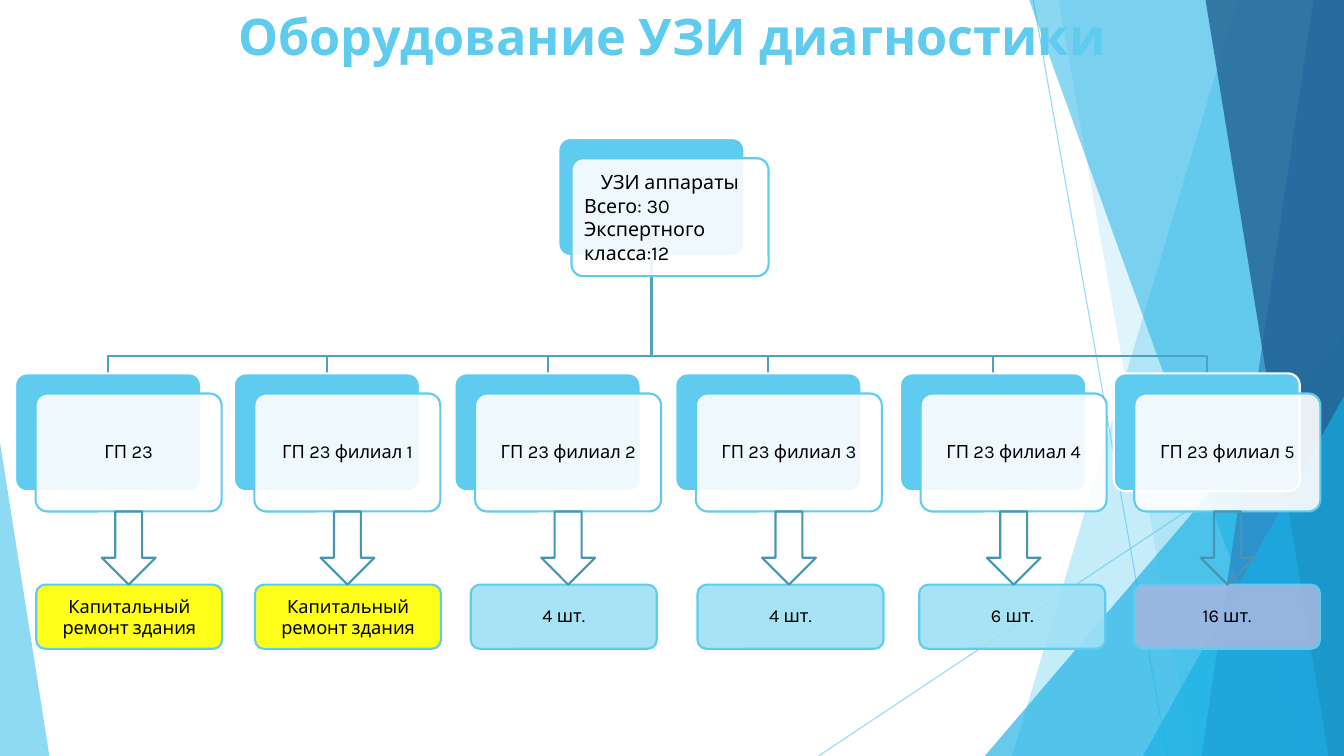
from lxml.etree import SubElement
from pptx import Presentation
from pptx.dml.color import RGBColor
from pptx.enum.shapes import MSO_CONNECTOR, MSO_SHAPE
from pptx.enum.text import MSO_ANCHOR, PP_ALIGN
from pptx.oxml.ns import qn
from pptx.util import Emu, Inches, Pt

COLUMNS, ROWS = 160, 90
WHITE = RGBColor(0xFF, 0xFF, 0xFF)
BLACK = RGBColor(0x00, 0x00, 0x00)
SKY = RGBColor(0x5F, 0xCB, 0xEF)
CYAN = RGBColor(0x17, 0xB0, 0xE4)
BLUE = RGBColor(0x2E, 0x83, 0xC3)
NAVY = RGBColor(0x22, 0x62, 0x92)
BRANCH = RGBColor(0x4C, 0xA3, 0xBF)
ARROW = RGBColor(0x46, 0x96, 0xB1)
YELLOW = RGBColor(0xFF, 0xFF, 0x00)
PALE = RGBColor(0x9F, 0xE0, 0xF5)
LILAC = RGBColor(0xA1, 0xB7, 0xE1)

CARD_WIDTH, CARD_HEIGHT = 22.15, 14.04
CARD_SHIFT = 2.44
CARD_TOP, BUS_ROW = 44.45, 42.4
ROOT_LEFT, ROOT_TOP = 66.48, 16.44
RESULT_TOP, RESULT_HEIGHT = 69.6, 7.64
REPAIR = "Капитальный ремонт здания"
CLINICS = [
    (1.8, "ГП 23", 4.32, REPAIR, YELLOW, 1.0),
    (27.84, "ГП 23 филиал 1", 30.36, REPAIR, YELLOW, 1.0),
    (54.12, "ГП 23 филиал 2", 56.04, "4 шт.", PALE, 0.9),
    (80.4, "ГП 23 филиал 3", 83.04, "4 шт.", PALE, 0.9),
    (107.16, "ГП 23 филиал 4", 109.44, "6 шт.", PALE, 0.9),
    (132.6, "ГП 23 филиал 5", 135, "16 шт.", LILAC, 0.9),
]


def write_text(paragraph, text, size=13, color=BLACK, bold=False,
               align=PP_ALIGN.CENTER, spacing=1.0):
    paragraph.alignment = align
    paragraph.line_spacing = spacing
    run = paragraph.add_run()
    run.text = text
    run.font.name = "Karla"
    run.font.size = Pt(size)
    run.font.bold = bold
    run.font.color.rgb = color


def set_opacity(shape, percent):
    color = next(shape.element.spPr.iter(qn("a:srgbClr")))
    SubElement(color, qn("a:alpha")).set("val", str(percent * 1000))


class SlideBuilder:
    def __init__(self, presentation):
        self.column = presentation.slide_width / COLUMNS
        self.row = presentation.slide_height / ROWS
        self.slide = presentation.slides.add_slide(presentation.slide_layouts[5])
        self.shapes = self.slide.shapes

    def point(self, column, row):
        return Emu(round(column * self.column)), Emu(round(row * self.row))

    def style(self, shape, fill=None, opacity=100, line=None):
        shape.shadow.inherit = False
        if fill is None:
            shape.fill.background()
        else:
            shape.fill.solid()
            shape.fill.fore_color.rgb = fill
            if opacity < 100:
                set_opacity(shape, opacity)
        if line is None:
            shape.line.fill.background()
        else:
            shape.line.color.rgb = line
            shape.line.width = Pt(1.5)
        return shape

    def title(self, text):
        title = self.shapes.title
        title.element.getparent().append(title.element)
        title.left, title.top = self.point(0, 0)
        title.width, title.height = self.point(COLUMNS, 8.4)
        title.text_frame.vertical_anchor = MSO_ANCHOR.MIDDLE
        write_text(title.text_frame.paragraphs[0], text, size=36, color=SKY, bold=True)

    def preset(self, kind, left, top, width, height, adjust=None, **look):
        shape = self.shapes.add_shape(
            kind, *self.point(left, top), *self.point(width, height))
        if adjust is not None:
            shape.adjustments[0] = adjust
        return self.style(shape, **look)

    def outline(self, points, close=True, **look):
        corners = [self.point(*corner) for corner in points]
        builder = self.shapes.build_freeform(*corners[0])
        builder.add_line_segments(corners[1:], close=close)
        return self.style(builder.convert_to_shape(), **look)

    def thin_line(self, start, end):
        connector = self.shapes.add_connector(
            MSO_CONNECTOR.STRAIGHT, *self.point(*start), *self.point(*end))
        connector.line.color.rgb = SKY
        connector.line.width = Pt(0.75)
        set_opacity(connector, 70)
        SubElement(connector.element.spPr, qn("a:effectLst"))

    def box(self, left, top, width, height, lines, fill=WHITE, adjust=0.1):
        shape = self.preset(MSO_SHAPE.ROUNDED_RECTANGLE, left, top, width, height,
                            adjust, fill=fill, opacity=90, line=SKY)
        frame = shape.text_frame
        frame.word_wrap = True
        frame.vertical_anchor = MSO_ANCHOR.MIDDLE
        frame.margin_left = frame.margin_right = Inches(0.09)
        frame.margin_top = frame.margin_bottom = Inches(0.09)
        for index, (text, look) in enumerate(lines):
            paragraph = frame.add_paragraph() if index else frame.paragraphs[0]
            write_text(paragraph, text, **look)

    def card(self, left, top, lines, shift=CARD_SHIFT, width=CARD_WIDTH):
        self.preset(MSO_SHAPE.ROUNDED_RECTANGLE, left, top, CARD_WIDTH, CARD_HEIGHT,
                    0.1, fill=SKY, line=WHITE)
        self.box(left + shift, top + 2.4, width, CARD_HEIGHT, lines)

    def band(self, top_left, bottom_left, fill, opacity):
        self.outline([(top_left, 0), (COLUMNS, 0), (COLUMNS, ROWS), (bottom_left, ROWS)],
                     fill=fill, opacity=opacity)

    def wedge(self, left, top, width, apex, fill, opacity):
        self.preset(MSO_SHAPE.ISOSCELES_TRIANGLE, left, top, width, ROWS - top, apex,
                    fill=fill, opacity=opacity)

    def backdrop(self):
        self.thin_line((123, 0), (138.96, ROWS))
        self.thin_line((COLUMNS, 48.36), (97.44, ROWS))
        self.band(147.36, 120.48, SKY, 36)
        self.band(126, 141.96, SKY, 20)
        self.wedge(117.24, 39.96, 42.76, 1, CYAN, 66)
        self.band(122.52, 154.92, CYAN, 50)
        self.band(156.36, 143.04, BLUE, 70)
        self.band(143.52, 158.16, NAVY, 80)
        self.wedge(136.08, 47.16, 23.92, 1, CYAN, 66)
        self.wedge(0, 52.68, 5.88, 0, SKY, 70)


def main():
    presentation = Presentation()
    presentation.slide_width = Inches(13.333)
    presentation.slide_height = Inches(7.5)
    builder = SlideBuilder(presentation)
    builder.backdrop()
    builder.title("Оборудование УЗИ диагностики")

    root_center = ROOT_LEFT + CARD_WIDTH / 2
    for left, *_ in reversed(CLINICS):
        center = left + CARD_WIDTH / 2
        builder.outline([(root_center, ROOT_TOP + CARD_HEIGHT), (root_center, BUS_ROW),
                         (center, BUS_ROW), (center, CARD_TOP)],
                        close=False, line=BRANCH)

    left_line = {"size": 14, "align": PP_ALIGN.LEFT}
    builder.card(ROOT_LEFT, ROOT_TOP,
                 [("УЗИ аппараты", {"size": 14}), ("Всего: 30", left_line),
                  ("Экспертного класса:12", left_line)], shift=1.56, width=23.46)

    for left, clinic, result_left, result, fill, spacing in CLINICS:
        builder.card(left, CARD_TOP, [(clinic, {"spacing": 0.9})])
        builder.box(result_left, RESULT_TOP, CARD_WIDTH, RESULT_HEIGHT,
                    [(result, {"spacing": spacing})], fill=fill, adjust=0.14)
        builder.preset(MSO_SHAPE.DOWN_ARROW, left + 10.32, 60.9, 6.4, 8.7, line=ARROW)

    presentation.save("out.pptx")


if __name__ == "__main__":
    main()
